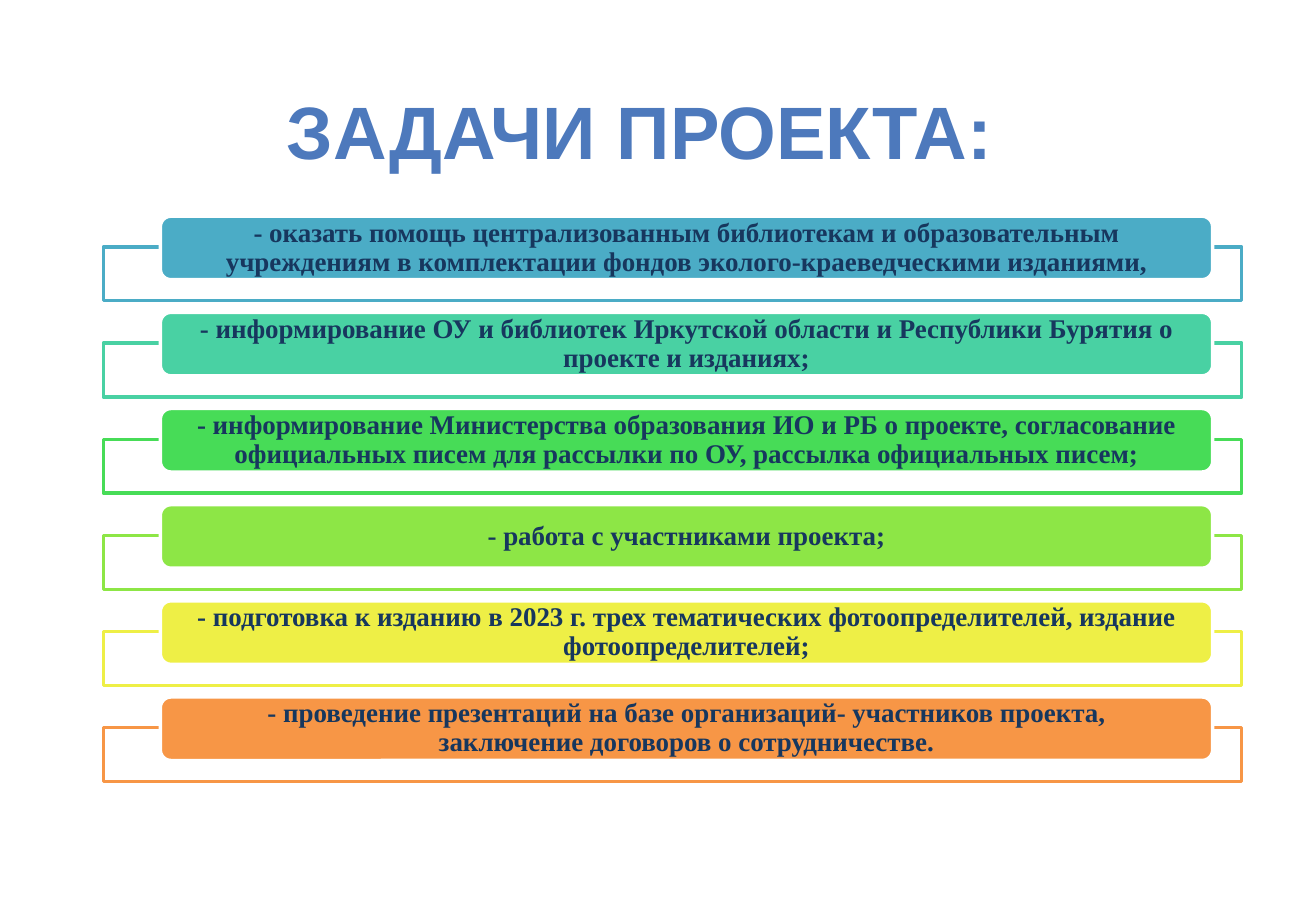
from dataclasses import dataclass

from pptx import Presentation
from pptx.dml.color import RGBColor
from pptx.enum.shapes import MSO_SHAPE
from pptx.enum.text import MSO_ANCHOR, PP_ALIGN
from pptx.util import Inches, Pt

SLIDE_WIDTH, SLIDE_HEIGHT = 10.83, 7.5

# Rows of the task list: pitch in inches, parts as shares of a row
ROWS_TOP, ROWS_BOTTOM = 1.78, 6.53
FRAME_OFFSET, FRAME_SHARE, LABEL_SHARE = 0.32, 0.56, 0.66
FRAME_LEFT, FRAME_WIDTH = 0.85, 9.37
LABEL_LEFT, LABEL_WIDTH = 1.32, 8.66


@dataclass(frozen=True)
class Task:
    text: str
    color: str


@dataclass(frozen=True)
class Box:
    left: float
    top: float
    width: float
    height: float

    def lengths(self):
        return [Inches(value) for value in (self.left, self.top, self.width, self.height)]


TASKS = [
    Task("- оказать помощь централизованным библиотекам и образовательным учреждениям "
         "в комплектации фондов эколого-краеведческими изданиями,", "4BACC6"),
    Task("- информирование ОУ и библиотек Иркутской области и Республики Бурятия "
         "о проекте и изданиях;", "49D1A3"),
    Task("- информирование Министерства образования ИО и РБ о проекте, согласование "
         "официальных писем для рассылки по ОУ, рассылка официальных писем;", "47DC57"),
    Task("- работа с участниками проекта;", "8DE646"),
    Task("- подготовка к изданию в 2023 г. трех тематических фотоопределителей, "
         "издание фотоопределителей;", "EEEF46"),
    Task("- проведение презентаций на базе организаций- участников проекта, "
         "заключение договоров о сотрудничестве.", "F79646"),
]


def color(value: str) -> RGBColor:
    return RGBColor.from_string(value)


def add_block(slide, kind: MSO_SHAPE, box: Box, fill: str, line: str):
    shape = slide.shapes.add_shape(kind, *box.lengths())
    shape.shadow.inherit = False
    shape.fill.solid()
    shape.fill.fore_color.rgb = color(fill)
    shape.line.color.rgb = color(line)
    shape.line.width = Pt(2)
    return shape


def write(shape, text: str, font_name: str, size: float, font_color: str):
    frame = shape.text_frame
    frame.word_wrap = True
    frame.vertical_anchor = MSO_ANCHOR.MIDDLE
    paragraph = frame.paragraphs[0]
    paragraph.alignment = PP_ALIGN.CENTER
    run = paragraph.add_run()
    run.text = text
    run.font.name = font_name
    run.font.size = Pt(size)
    run.font.bold = True
    run.font.color.rgb = color(font_color)
    return paragraph


def add_task(slide, task: Task, top: float, row: float) -> None:
    # Open frame behind the label
    frame_box = Box(FRAME_LEFT, top + FRAME_OFFSET * row, FRAME_WIDTH, FRAME_SHARE * row)
    add_block(slide, MSO_SHAPE.RECTANGLE, frame_box, "FFFFFF", task.color)

    # Rounded label with the task text
    label_box = Box(LABEL_LEFT, top, LABEL_WIDTH, LABEL_SHARE * row)
    label = add_block(slide, MSO_SHAPE.ROUNDED_RECTANGLE, label_box, task.color, "FFFFFF")
    label.text_frame.margin_left = label.text_frame.margin_right = Inches(0.25)
    label.text_frame.margin_top = label.text_frame.margin_bottom = 0
    paragraph = write(label, task.text, "Times New Roman", 16, "17375E")
    paragraph.line_spacing = 0.9


def main() -> None:
    presentation = Presentation()
    presentation.slide_width = Inches(SLIDE_WIDTH)
    presentation.slide_height = Inches(SLIDE_HEIGHT)
    slide = presentation.slides.add_slide(presentation.slide_layouts[6])

    # Title
    title = slide.shapes.add_textbox(*Box(1.72, 0.44, 7.09, 1.25).lengths())
    write(title, "ЗАДАЧИ ПРОЕКТА:", "Arial", 44, "4D79BC")

    # Task list
    row = (ROWS_BOTTOM - ROWS_TOP) / len(TASKS)
    for index, task in enumerate(TASKS):
        add_task(slide, task, ROWS_TOP + index * row, row)

    presentation.save("out.pptx")


if __name__ == "__main__":
    main()
